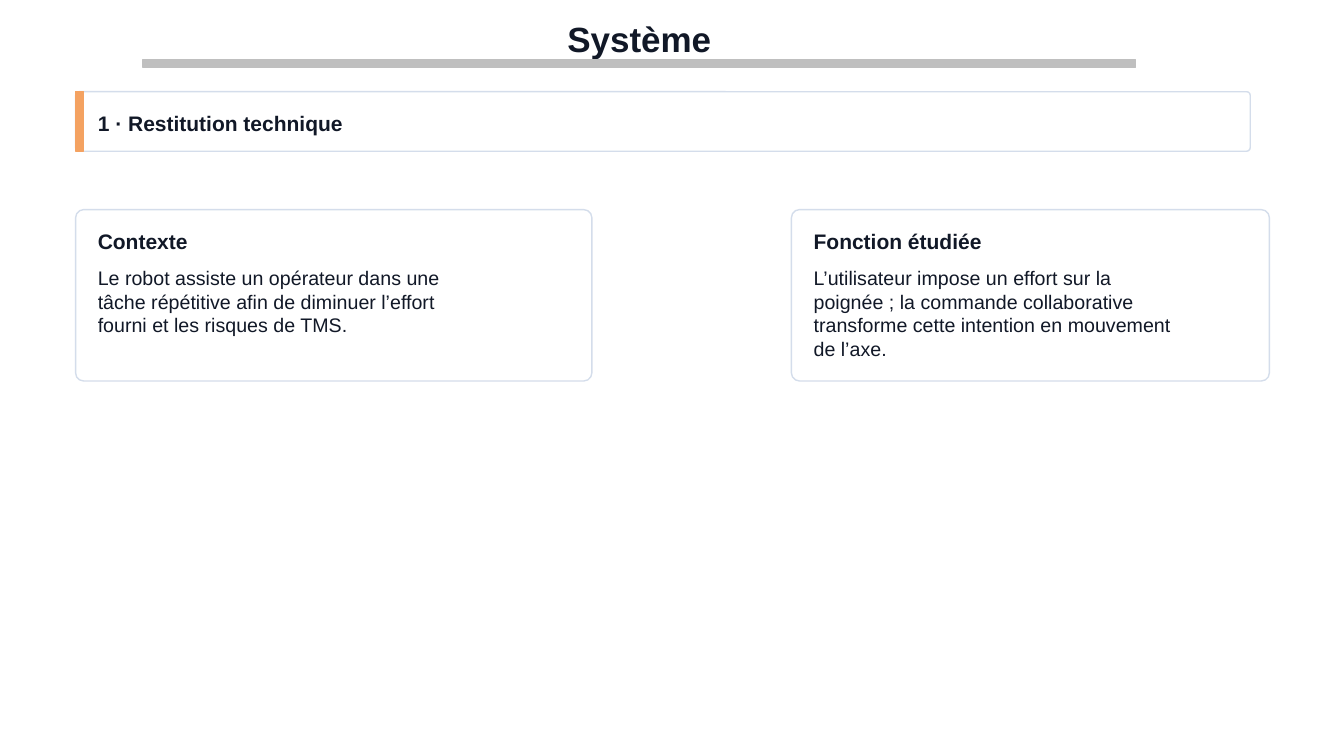
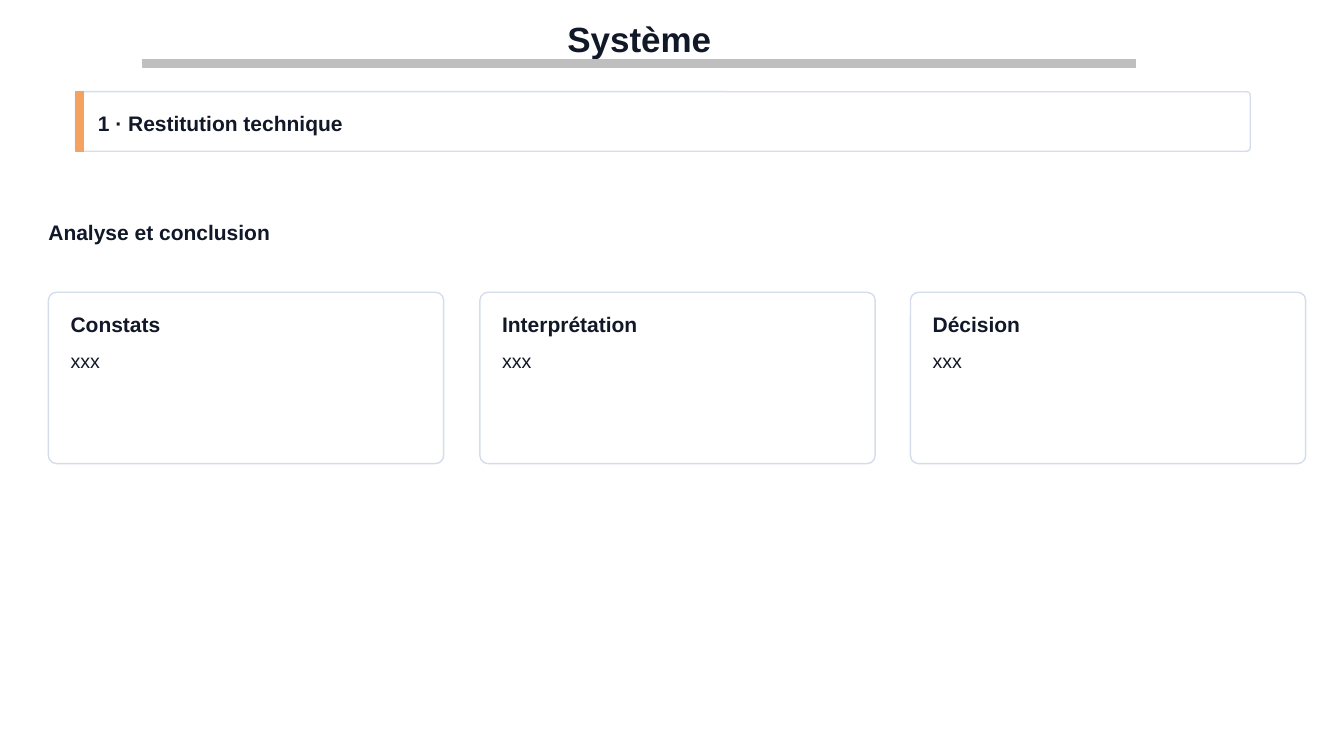
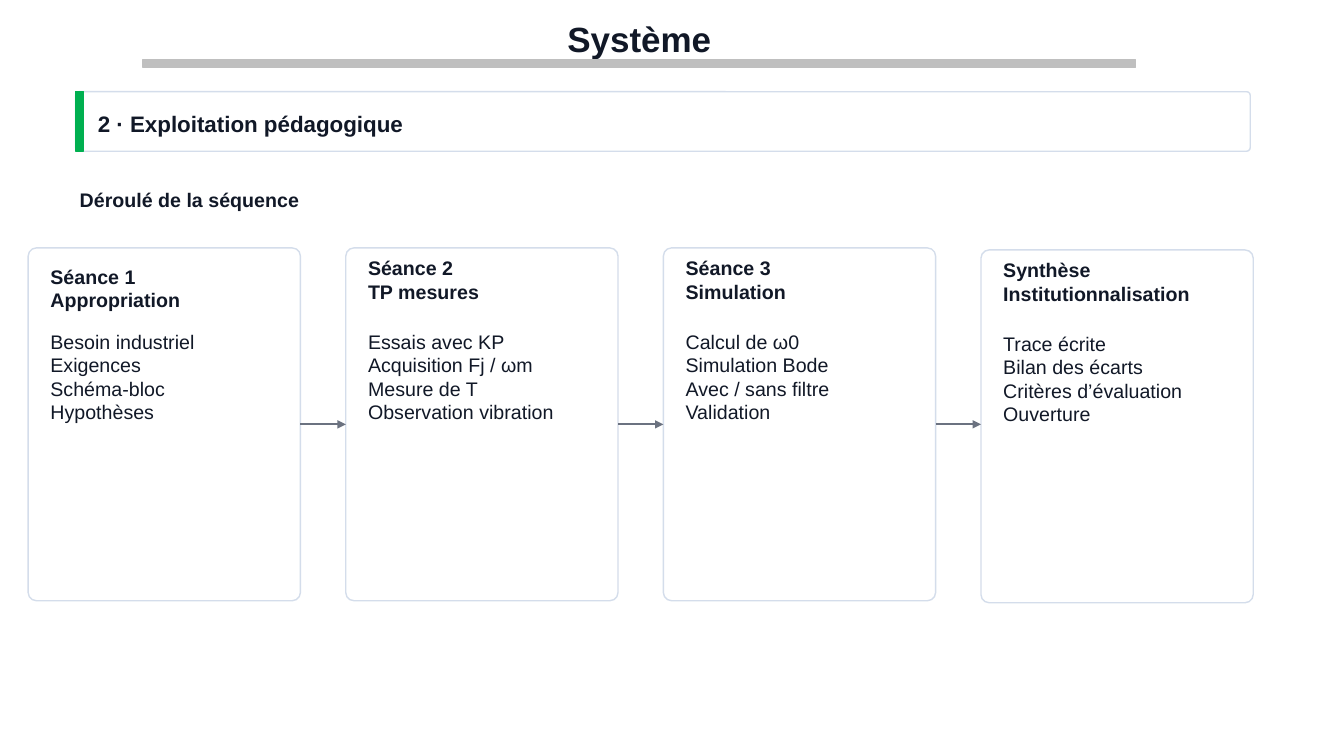
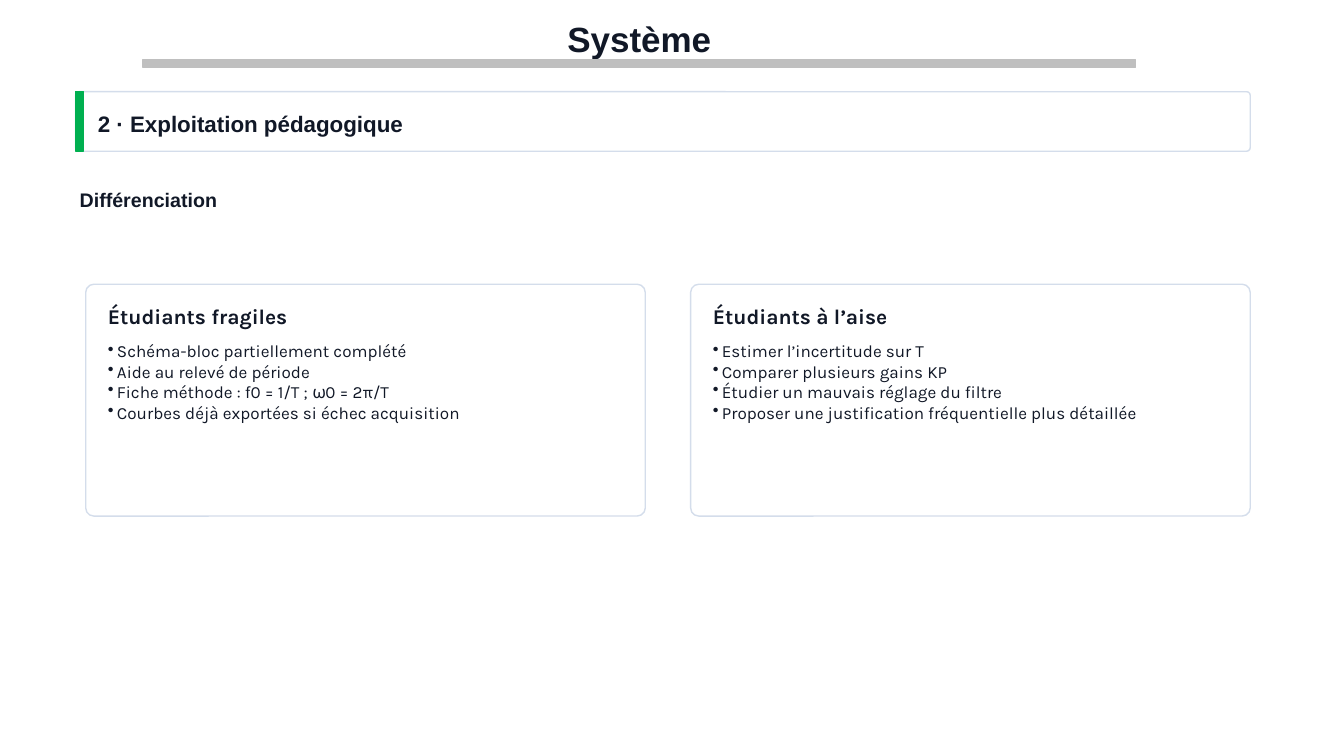
from dataclasses import dataclass

from lxml.etree import SubElement
from pptx import Presentation
from pptx.dml.color import RGBColor
from pptx.enum.shapes import MSO_CONNECTOR as Connector, MSO_SHAPE as Preset
from pptx.enum.text import MSO_ANCHOR as Anchor, PP_ALIGN as Align
from pptx.oxml.ns import qn
from pptx.shapes.autoshape import Shape
from pptx.slide import Slide
from pptx.util import Emu, Pt

EMU_PER_PX = 9144


@dataclass(frozen=True)
class Theme:
    ink: str = "111827"
    paper: str = "FFFFFF"
    border: str = "D4DDEB"
    rule: str = "BFBFBF"
    arrow: str = "6B7280"
    technical: str = "F4A261"
    teaching: str = "00B050"
    font: str = "Arial"
    alternate_font: str = "Karla"
    title_size: float = 25
    section_size: float = 16
    heading_size: float = 15
    body_size: float = 14
    bullet_size: float = 12.2
    border_width: float = 1
    arrow_width: float = 1.6


THEME = Theme()


@dataclass(frozen=True)
class Box:
    left: int
    top: int
    width: int
    height: int


@dataclass(frozen=True)
class Section:
    label: str
    accent: str
    size: float


@dataclass(frozen=True)
class CardStyle:
    text_width: int
    heading_size: float = THEME.heading_size
    body_size: float = THEME.body_size
    font: str = THEME.font
    body_offset: int = 56
    bottom_margin: int = 12
    bulleted: bool = False


@dataclass(frozen=True)
class Card:
    heading: str
    body: str
    heading_height: int = 35


TECHNICAL = Section("1 · Restitution technique", THEME.technical, THEME.heading_size)
TEACHING = Section("2 · Exploitation pédagogique", THEME.teaching, THEME.section_size)
SUMMARY_STYLE = CardStyle(370)
SESSION_STYLE = CardStyle(
    235, heading_size=THEME.body_size, body_offset=81, bottom_margin=11
)
LEVEL_STYLE = CardStyle(
    520, body_size=THEME.bullet_size, font=THEME.alternate_font, bulleted=True
)


def px(length: int) -> Emu:
    return Emu(length * EMU_PER_PX)


def place(box: Box) -> tuple[Emu, Emu, Emu, Emu]:
    return px(box.left), px(box.top), px(box.width), px(box.height)


def columns(left: int, right: int, width: int, count: int) -> list[int]:
    pitch = (right - left - width) / (count - 1)
    return [left + round(index * pitch) for index in range(count)]


def add_text(
    slide: Slide,
    text: str,
    box: Box,
    *,
    size: float,
    font: str = THEME.font,
    bold: bool = False,
    align: Align = Align.LEFT,
    anchor: Anchor = Anchor.MIDDLE,
    bulleted: bool = False,
) -> None:
    frame = slide.shapes.add_textbox(*place(box)).text_frame
    frame.word_wrap = True
    frame.vertical_anchor = anchor
    frame.margin_left = frame.margin_top = frame.margin_right = frame.margin_bottom = 0
    for index, line in enumerate(text.split("\n")):
        paragraph = frame.add_paragraph() if index else frame.paragraphs[0]
        paragraph.alignment = align
        if bulleted:
            properties = paragraph._p.get_or_add_pPr()
            properties.set("marL", str(px(9)))
            properties.set("indent", str(px(-9)))
            SubElement(properties, qn("a:buChar")).set("char", "•")
        run = paragraph.add_run()
        run.text = line
        run.font.name = font
        run.font.size = Pt(size)
        run.font.bold = bold
        run.font.color.rgb = RGBColor.from_string(THEME.ink)


def add_panel(
    slide: Slide, box: Box, fill: str, border: str, corner: float = 0
) -> Shape:
    preset = Preset.ROUNDED_RECTANGLE if corner else Preset.RECTANGLE
    panel = slide.shapes.add_shape(preset, *place(box))
    if corner:
        panel.adjustments[0] = corner
    panel.shadow.inherit = False
    panel.fill.solid()
    panel.fill.fore_color.rgb = RGBColor.from_string(fill)
    panel.line.color.rgb = RGBColor.from_string(border)
    panel.line.width = Pt(THEME.border_width)
    return panel


def add_card(slide: Slide, card: Card, box: Box, style: CardStyle) -> Shape:
    corner = round(8 / min(box.width, box.height), 3)
    outline = add_panel(slide, box, THEME.paper, THEME.border, corner)
    left = box.left + 22
    add_text(
        slide,
        card.heading,
        Box(left, box.top + 14, style.text_width, card.heading_height),
        size=style.heading_size,
        font=style.font,
        bold=True,
    )
    body_height = box.height - style.body_offset - style.bottom_margin
    add_text(
        slide,
        card.body,
        Box(left, box.top + style.body_offset, style.text_width, body_height),
        size=style.body_size,
        font=style.font,
        anchor=Anchor.TOP,
        bulleted=style.bulleted,
    )
    return outline


def add_arrow(slide: Slide, source: Shape, target: Shape) -> None:
    middle = source.top + source.height // 2
    arrow = slide.shapes.add_connector(
        Connector.STRAIGHT, source.left + source.width, middle, target.left, middle
    )
    arrow.begin_connect(source, 3)
    if source.top == target.top:
        arrow.end_connect(target, 1)
    arrow.line.color.rgb = RGBColor.from_string(THEME.arrow)
    arrow.line.width = Pt(THEME.arrow_width)
    SubElement(arrow.line._get_or_add_ln(), qn("a:tailEnd")).set("type", "triangle")
    SubElement(arrow._element.spPr, qn("a:effectLst"))


def add_page(deck: Presentation, section: Section) -> Slide:
    slide = deck.slides.add_slide(deck.slide_layouts[6])
    add_text(
        slide,
        "Système",
        Box(142, 14, 984, 48),
        size=THEME.title_size,
        bold=True,
        align=Align.CENTER,
    )
    add_panel(slide, Box(142, 59, 984, 8), THEME.rule, THEME.rule)
    add_panel(slide, Box(75, 91, 1165, 59), THEME.paper, THEME.border, 0.06)
    add_panel(slide, Box(75, 91, 8, 59), section.accent, section.accent)
    add_text(
        slide, section.label, Box(97, 105, 535, 35), size=section.size, bold=True
    )
    return slide


def add_context(deck: Presentation) -> None:
    slide = add_page(deck, TECHNICAL)
    context = Card(
        "Contexte",
        "Le robot assiste un opérateur dans une tâche répétitive afin de diminuer "
        "l’effort fourni et les risques de TMS.",
    )
    function = Card(
        "Fonction étudiée",
        "L’utilisateur impose un effort sur la poignée ; la commande collaborative "
        "transforme cette intention en mouvement de l’axe.",
    )
    add_card(slide, context, Box(75, 208, 512, 170), SUMMARY_STYLE)
    add_card(slide, function, Box(785, 208, 474, 170), SUMMARY_STYLE)


def add_conclusion(deck: Presentation) -> None:
    slide = add_page(deck, TECHNICAL)
    add_text(
        slide,
        "Analyse et conclusion",
        Box(48, 213, 370, 35),
        size=THEME.heading_size,
        bold=True,
    )
    headings = ("Constats", "Interprétation", "Décision")
    for heading, left in zip(headings, columns(48, 1295, 392, len(headings))):
        add_card(slide, Card(heading, "xxx"), Box(left, 290, 392, 170), SUMMARY_STYLE)


def add_teaching_page(deck: Presentation, subtitle: str) -> Slide:
    slide = add_page(deck, TEACHING)
    add_text(
        slide, subtitle, Box(79, 181, 515, 35), size=THEME.body_size, bold=True
    )
    return slide


def add_sequence(deck: Presentation) -> None:
    slide = add_teaching_page(deck, "Déroulé de la séquence")
    sessions = (
        Card(
            "Séance 1\nAppropriation",
            "Besoin industriel\nExigences\nSchéma-bloc\nHypothèses",
            heading_height=52,
        ),
        Card(
            "Séance 2\nTP mesures",
            "Essais avec KP\nAcquisition Fj / ωm\nMesure de T\nObservation vibration",
        ),
        Card(
            "Séance 3\nSimulation",
            "Calcul de ω0\nSimulation Bode\nAvec / sans filtre\nValidation",
        ),
        Card(
            "Synthèse\nInstitutionnalisation",
            "Trace écrite\nBilan des écarts\nCritères d’évaluation\nOuverture",
        ),
    )
    lefts = columns(28, 1243, 270, len(sessions))
    tops = (246, 246, 246, 248)
    outlines = [
        add_card(slide, session, Box(left, top, 270, 350), SESSION_STYLE)
        for session, left, top in zip(sessions, lefts, tops)
    ]
    for source, target in zip(outlines, outlines[1:]):
        add_arrow(slide, source, target)


def add_differentiation(deck: Presentation) -> None:
    slide = add_teaching_page(deck, "Différenciation")
    levels = (
        Card(
            "Étudiants fragiles",
            "Schéma-bloc partiellement complété\n"
            "Aide au relevé de période\n"
            "Fiche méthode : f0 = 1/T ; ω0 = 2π/T\n"
            "Courbes déjà exportées si échec acquisition",
        ),
        Card(
            "Étudiants à l’aise",
            "Estimer l’incertitude sur T\n"
            "Comparer plusieurs gains KP\n"
            "Étudier un mauvais réglage du filtre\n"
            "Proposer une justification fréquentielle plus détaillée",
        ),
    )
    for level, left in zip(levels, columns(85, 1240, 555, len(levels))):
        add_card(slide, level, Box(left, 282, 555, 230), LEVEL_STYLE)


def main() -> None:
    deck = Presentation()
    deck.slide_width, deck.slide_height = px(1333), px(750)
    add_context(deck)
    add_conclusion(deck)
    add_sequence(deck)
    add_differentiation(deck)
    deck.save("out.pptx")


if __name__ == "__main__":
    main()
